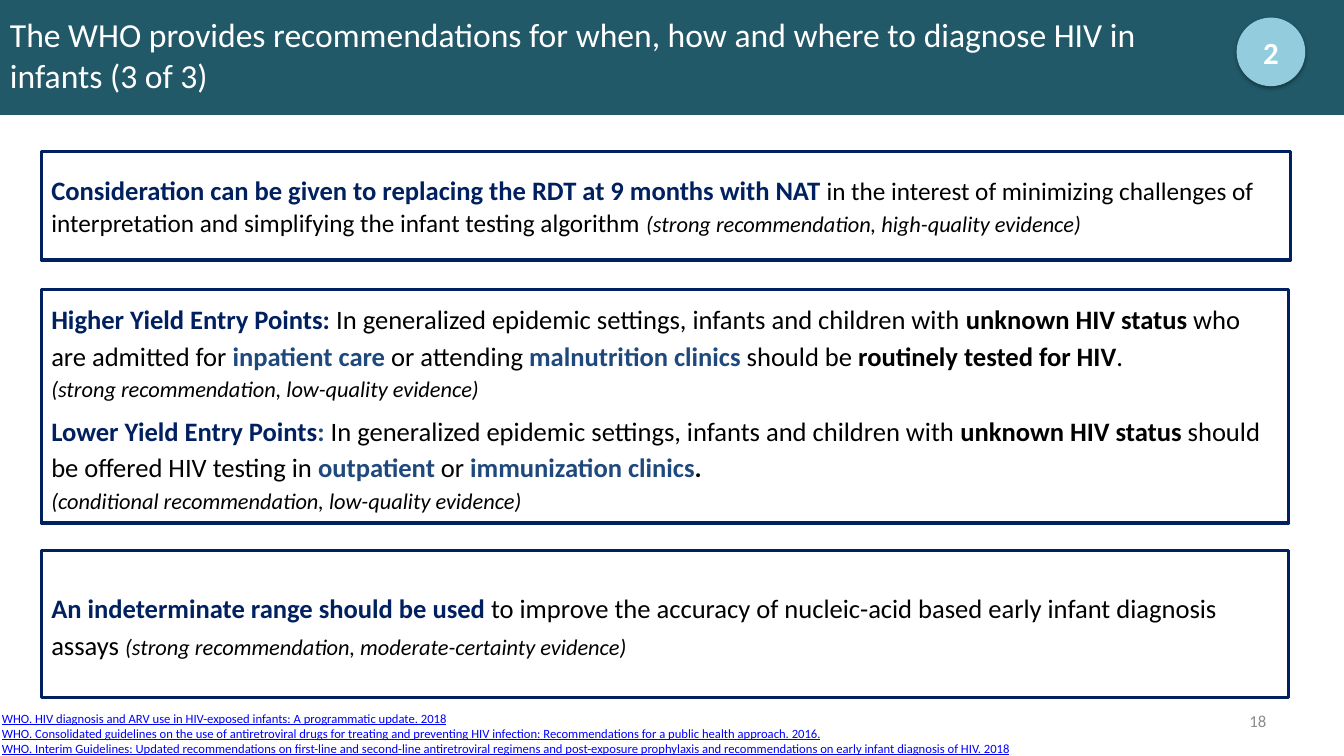
from lxml.etree import SubElement
from pptx import Presentation
from pptx.dml.color import RGBColor
from pptx.enum.shapes import MSO_SHAPE
from pptx.enum.text import MSO_ANCHOR, PP_ALIGN
from pptx.oxml.ns import qn
from pptx.util import Inches, Pt

WIDTH, HEIGHT = Inches(13.33), Inches(7.5)
COLORS = {"band": "215968", "badge": "93CDDD", "navy": "002060", "blue": "1F497D",
          "black": "000000", "white": "FFFFFF", "gray": "8C8C8C", "link": "0000FF"}
STYLES = {
    "lead": (19, "navy", True, False),
    "place": (19, "blue", True, False),
    "strong": (19, "black", True, False),
    "plain": (19, "black", False, False),
    "small": (18, "black", False, False),
    "evidence": (16, "black", False, True),
}
NAT = [[
    ("lead", "Consideration can be given to replacing the RDT at 9 months with NAT "),
    ("small", "in the interest of minimizing challenges of interpretation and "
              "simplifying the infant testing algorithm"),
    ("plain", " "),
    ("evidence", "(strong recommendation, high-quality evidence)"),
]]
SETTINGS = ("plain", "In generalized epidemic settings, infants and children with ")
UNKNOWN = ("strong", "unknown HIV status ")
ENTRY_POINTS = [
    [("lead", "Higher Yield Entry Points: "), SETTINGS, UNKNOWN,
     ("plain", "who are admitted for "), ("place", "inpatient care "),
     ("plain", "or attending "), ("place", "malnutrition clinics "),
     ("plain", "should be "), ("strong", "routinely tested for HIV"), ("plain", ".")],
    [("evidence", "(strong recommendation, low-quality evidence)")],
    [("lead", "Lower Yield Entry Points"), ("place", ": "), SETTINGS, UNKNOWN,
     ("plain", "should be offered HIV testing in "), ("place", "outpatient"),
     ("plain", " or "), ("place", "immunization clinics"), ("strong", ".")],
    [("evidence", "(conditional recommendation, low-quality evidence)")],
]
INDETERMINATE = [[
    ("lead", "An indeterminate range should be used "),
    ("plain", "to improve the accuracy of nucleic-acid based early infant diagnosis assays "),
    ("evidence", "(strong recommendation, moderate-certainty evidence)"),
]]
REFERENCES = [
    "WHO. HIV diagnosis and ARV use in HIV-exposed infants: A programmatic update. 2018",
    "WHO. Consolidated guidelines on the use of antiretroviral drugs for treating and "
    "preventing HIV infection: Recommendations for a public health approach. 2016.",
    "WHO. Interim Guidelines: Updated recommendations on first-line and second-line "
    "antiretroviral regimens and post-exposure prophylaxis and recommendations on early "
    "infant diagnosis of HIV. 2018",
]


def area(left, top, width, height):
    """Turn percentages of the slide into lengths."""
    return (int(WIDTH * left / 100), int(HEIGHT * top / 100),
            int(WIDTH * width / 100), int(HEIGHT * height / 100))


def color(name):
    """Look up a named colour."""
    return RGBColor.from_string(COLORS[name])


def set_font(font, size, tint, bold=False, italic=False):
    """Apply the deck's typeface with the given look."""
    font.name, font.size, font.bold, font.italic = "Calibri", Pt(size), bold, italic
    font.color.rgb = color(tint)


def write_lines(frame, lines, size, tint, align=PP_ALIGN.LEFT, bold=False,
                underline=False, anchor=MSO_ANCHOR.MIDDLE):
    """Fill a text frame with uniformly styled paragraphs."""
    frame.word_wrap, frame.vertical_anchor = True, anchor
    for index, line in enumerate(lines):
        paragraph = frame.paragraphs[0] if index == 0 else frame.add_paragraph()
        paragraph.text, paragraph.alignment = line, align
        set_font(paragraph.font, size, tint, bold)
        paragraph.font.underline = underline


def add_text(slide, place, lines, size, tint, **look):
    """Add a text box."""
    box = slide.shapes.add_textbox(*area(*place))
    write_lines(box.text_frame, lines, size, tint, **look)


def add_band(slide, place):
    """Add the coloured band behind the title."""
    band = slide.shapes.add_shape(MSO_SHAPE.RECTANGLE, *area(*place))
    band.shadow.inherit = False
    band.fill.solid()
    band.fill.fore_color.rgb = color("band")
    band.line.fill.background()


def add_badge(slide, place, number):
    """Add the round section badge with its soft shadow."""
    badge = slide.shapes.add_shape(MSO_SHAPE.OVAL, *area(*place))
    badge.fill.solid()
    badge.fill.fore_color.rgb = badge.line.color.rgb = color("badge")
    badge.line.width = Pt(0.75)
    badge.shadow.inherit = False
    effects = badge.fill._xPr.find(qn("a:effectLst"))
    shadow = SubElement(effects, qn("a:outerShdw"), blurRad=str(Pt(3.1)),
                        dist=str(Pt(1.8)), dir="5400000", rotWithShape="0")
    tint = SubElement(shadow, qn("a:srgbClr"), val=COLORS["black"])
    SubElement(tint, qn("a:alpha"), val="35000")
    write_lines(badge.text_frame, [number], 22, "white", PP_ALIGN.CENTER, bold=True)


def add_recommendation(slide, place, paragraphs, spacing=1.14):
    """Add an outlined box of mixed-style paragraphs."""
    box = slide.shapes.add_shape(MSO_SHAPE.RECTANGLE, *area(*place))
    box.shadow.inherit = False
    box.fill.background()
    box.line.color.rgb, box.line.width = color("navy"), Pt(2.25)
    frame = box.text_frame
    frame.word_wrap, frame.vertical_anchor = True, MSO_ANCHOR.MIDDLE
    for index, pieces in enumerate(paragraphs):
        paragraph = frame.paragraphs[0] if index == 0 else frame.add_paragraph()
        paragraph.alignment, paragraph.line_spacing = PP_ALIGN.LEFT, spacing
        paragraph.space_before = Pt(6 if pieces[0][0] == "lead" else 0)
        for style, words in pieces:
            run = paragraph.add_run()
            run.text = words
            set_font(run.font, *STYLES[style])


def main():
    """Build the slide and save it."""
    deck = Presentation()
    deck.slide_width, deck.slide_height = WIDTH, HEIGHT
    slide = deck.slides.add_slide(deck.slide_layouts[6])
    add_band(slide, (0, -0.4, 100, 15.6))
    add_text(slide, (71.64, 92.67, 23.33, 5.33), ["18"], 12, "gray", align=PP_ALIGN.RIGHT)
    add_text(slide, (0, 0, 92.05, 14.4),
             ["The WHO provides recommendations for when, how and where to diagnose "
              "HIV in infants (3 of 3)"], 24, "white")
    add_badge(slide, (92.05, 2.4, 5.03, 8.93), "2")
    add_recommendation(slide, (3.08, 20, 92.95, 14.4), NAT, spacing=1.0)
    add_recommendation(slide, (3.08, 38.27, 92.8, 30.93), ENTRY_POINTS)
    add_recommendation(slide, (3.08, 72.8, 92.8, 19.47), INDETERMINATE)
    add_text(slide, (-0.6, 93.33, 97.67, 7.47), REFERENCES, 9, "link",
             underline=True, anchor=MSO_ANCHOR.TOP)
    deck.save("out.pptx")


if __name__ == "__main__":
    main()
